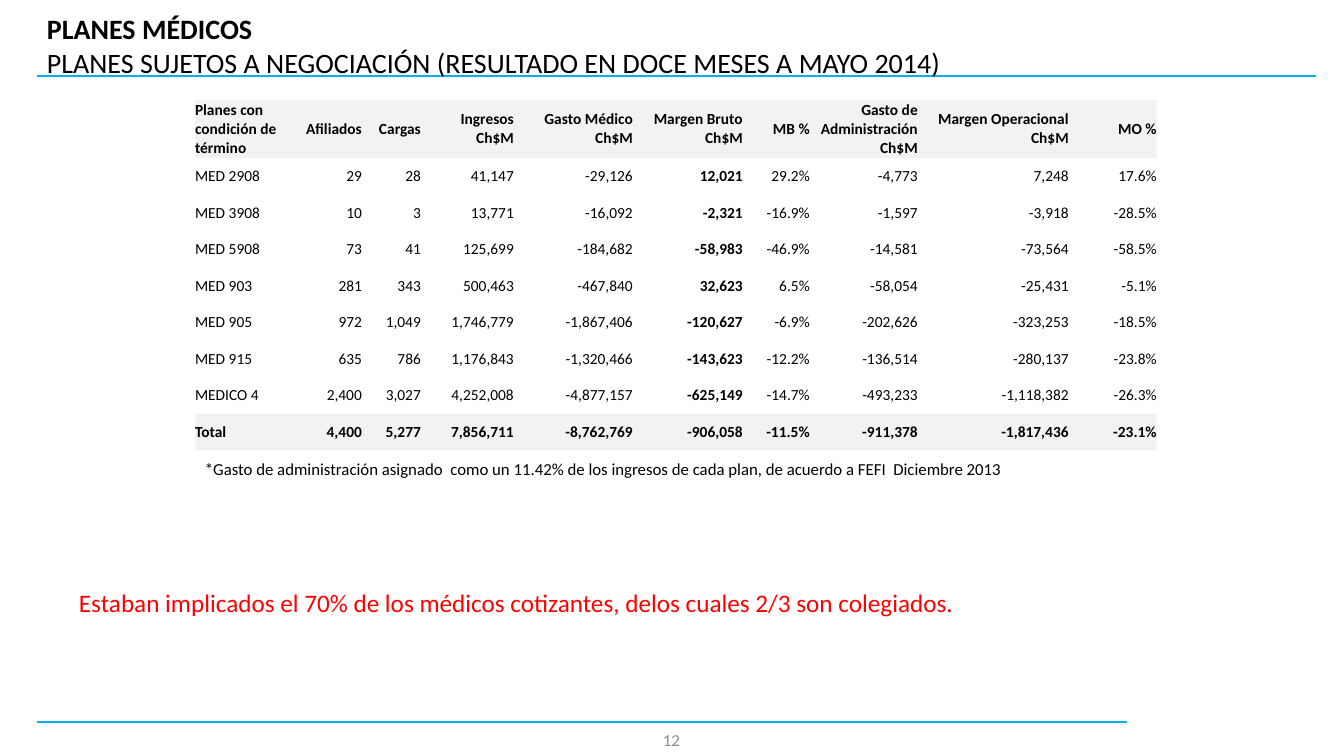
from lxml.etree import SubElement
from pptx import Presentation
from pptx.dml.color import RGBColor
from pptx.enum.shapes import MSO_CONNECTOR
from pptx.enum.text import MSO_ANCHOR as ANCHOR, PP_ALIGN as ALIGN
from pptx.oxml.ns import qn
from pptx.util import Emu, Pt

PX = 914400 / 100.8


def px(*lengths):
    return [Emu(round(length * PX)) for length in lengths]


def write(frame, text, size=12, color="000000", bold=False, align=ALIGN.LEFT, anchor=ANCHOR.TOP):
    frame.word_wrap = True
    frame.vertical_anchor = anchor
    paragraph = frame.paragraphs[0]
    paragraph.alignment = align
    run = paragraph.add_run()
    run.text = text
    run.font.name = "Calibri"
    run.font.size = Pt(size)
    run.font.bold = bold
    run.font.color.rgb = RGBColor.from_string(color)


prs = Presentation()
prs.slide_width, prs.slide_height = px(1344, 756)
slide = prs.slides.add_slide(prs.slide_layouts[6])
shapes = slide.shapes

# Rules under the title and above the page number
for right, y in [(1127, 722), (1316, 76)]:
    rule = shapes.add_connector(MSO_CONNECTOR.STRAIGHT, *px(right, y, 37, y))
    rule.line.color.rgb = RGBColor.from_string("00B0F0")
    rule.line.width = Pt(1.5)
    SubElement(rule._element.spPr, qn("a:effectLst"))

# Title
title = shapes.add_textbox(*px(37, 13, 1240, 64)).text_frame
write(title, "PLANES MÉDICOS", size=20, bold=True, anchor=ANCHOR.MIDDLE)
title.paragraphs[0].add_line_break()
write(title, "PLANES SUJETOS A NEGOCIACIÓN (RESULTADO EN DOCE MESES A MAYO 2014)",
      size=20, anchor=ANCHOR.MIDDLE)

# Page number
page_number = shapes.add_textbox(*px(515, 720, 313, 40)).text_frame
write(page_number, "12", color="8C8C8C", align=ALIGN.CENTER, anchor=ANCHOR.MIDDLE)

# Table of plans
plans = [
    ["Planes con condición de término", "Afiliados", "Cargas", "Ingresos Ch$M",
     "Gasto Médico Ch$M", "Margen Bruto Ch$M", "MB %", "Gasto de Administración Ch$M",
     "Margen Operacional Ch$M", "MO %"],
    ["MED 2908", "29", "28", "41,147", "-29,126", "12,021", "29.2%", "-4,773", "7,248", "17.6%"],
    ["MED 3908", "10", "3", "13,771", "-16,092", "-2,321", "-16.9%", "-1,597", "-3,918", "-28.5%"],
    ["MED 5908", "73", "41", "125,699", "-184,682", "-58,983", "-46.9%", "-14,581", "-73,564",
     "-58.5%"],
    ["MED 903", "281", "343", "500,463", "-467,840", "32,623", "6.5%", "-58,054", "-25,431",
     "-5.1%"],
    ["MED 905", "972", "1,049", "1,746,779", "-1,867,406", "-120,627", "-6.9%", "-202,626",
     "-323,253", "-18.5%"],
    ["MED 915", "635", "786", "1,176,843", "-1,320,466", "-143,623", "-12.2%", "-136,514",
     "-280,137", "-23.8%"],
    ["MEDICO 4", "2,400", "3,027", "4,252,008", "-4,877,157", "-625,149", "-14.7%", "-493,233",
     "-1,118,382", "-26.3%"],
    ["Total", "4,400", "5,277", "7,856,711", "-8,762,769", "-906,058", "-11.5%", "-911,378",
     "-1,817,436", "-23.1%"],
]
column_widths = [103, 64, 59, 93, 119, 110, 67, 108, 151, 88]
row_heights = [58] + [37, 36] * 4
GROSS_MARGIN = 5
NO_STYLE_NO_GRID = "{2D5ABB26-0587-4C30-8999-92F81FD0307C}"

plan_frame = shapes.add_table(len(plans), len(column_widths),
                              *px(195, 100, sum(column_widths), sum(row_heights)))
plan_frame._element.find(".//" + qn("a:tableStyleId")).text = NO_STYLE_NO_GRID
plan_table = plan_frame.table
plan_table.first_row = plan_table.horz_banding = False
for column, width in zip(plan_table.columns, px(*column_widths)):
    column.width = width
for row, height in zip(plan_table.rows, px(*row_heights)):
    row.height = height

for r, plan in enumerate(plans):
    shaded = r in (0, len(plans) - 1)
    for c, value in enumerate(plan):
        cell = plan_table.cell(r, c)
        cell.margin_left = cell.margin_right = cell.margin_top = cell.margin_bottom = 0
        cell.vertical_anchor = ANCHOR.MIDDLE
        if shaded:
            cell.fill.solid()
            cell.fill.fore_color.rgb = RGBColor.from_string("F2F2F2")
        else:
            cell.fill.background()
        write(cell.text_frame, value, size=11, bold=shaded or c == GROSS_MARGIN,
              align=ALIGN.RIGHT if c else ALIGN.LEFT, anchor=ANCHOR.MIDDLE)

# Footnote and closing remark
footnote = shapes.add_textbox(*px(195, 454, 953, 30)).text_frame
write(footnote, "*Gasto de administración asignado  como un 11.42% de los ingresos de cada plan, "
                "de acuerdo a FEFI  Diciembre 2013")
remark = shapes.add_textbox(*px(69, 582, 937, 40)).text_frame
write(remark, "Estaban implicados el 70% de los médicos cotizantes, delos cuales 2/3 son colegiados.",
      size=18, color="FF0000")

prs.save("out.pptx")
